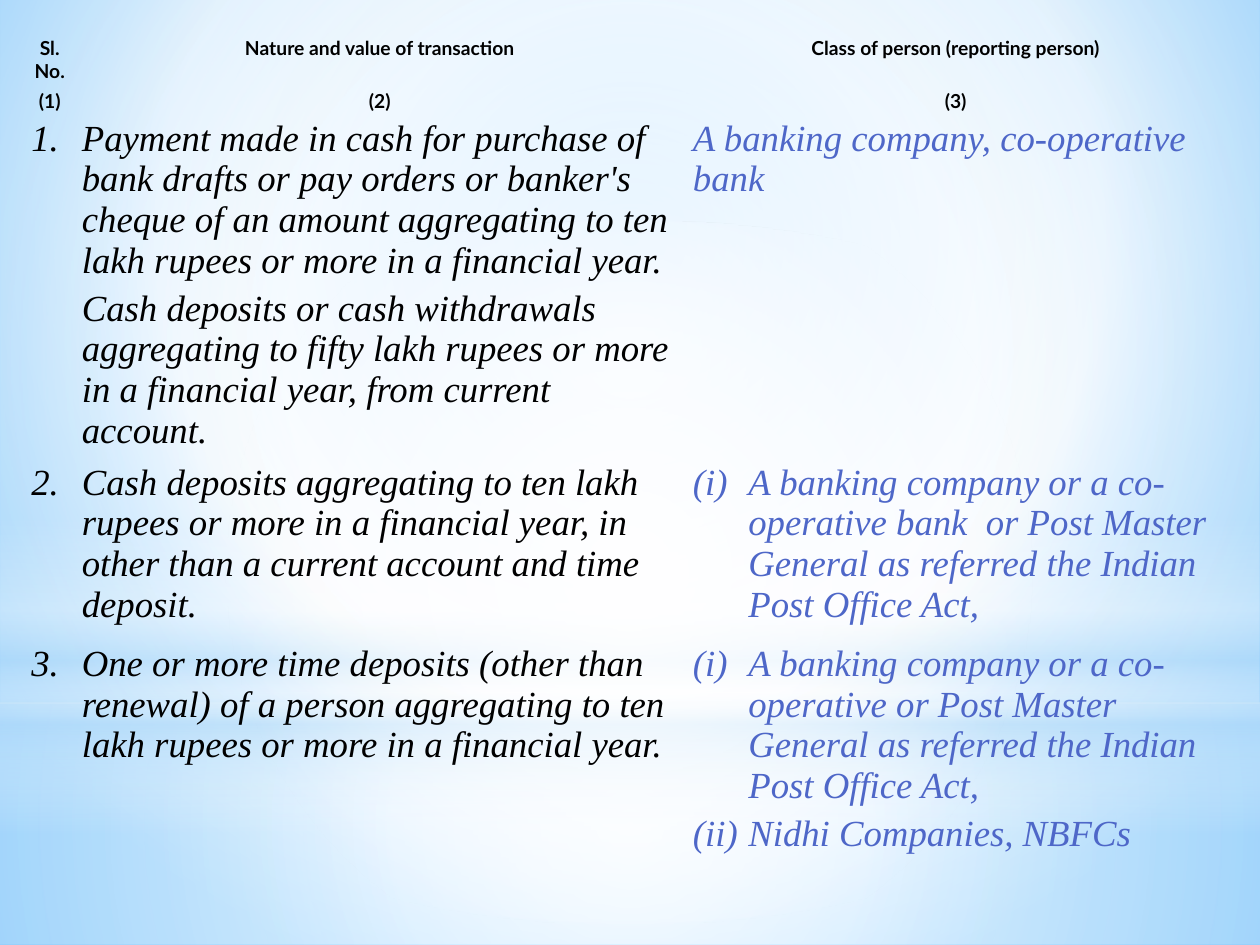
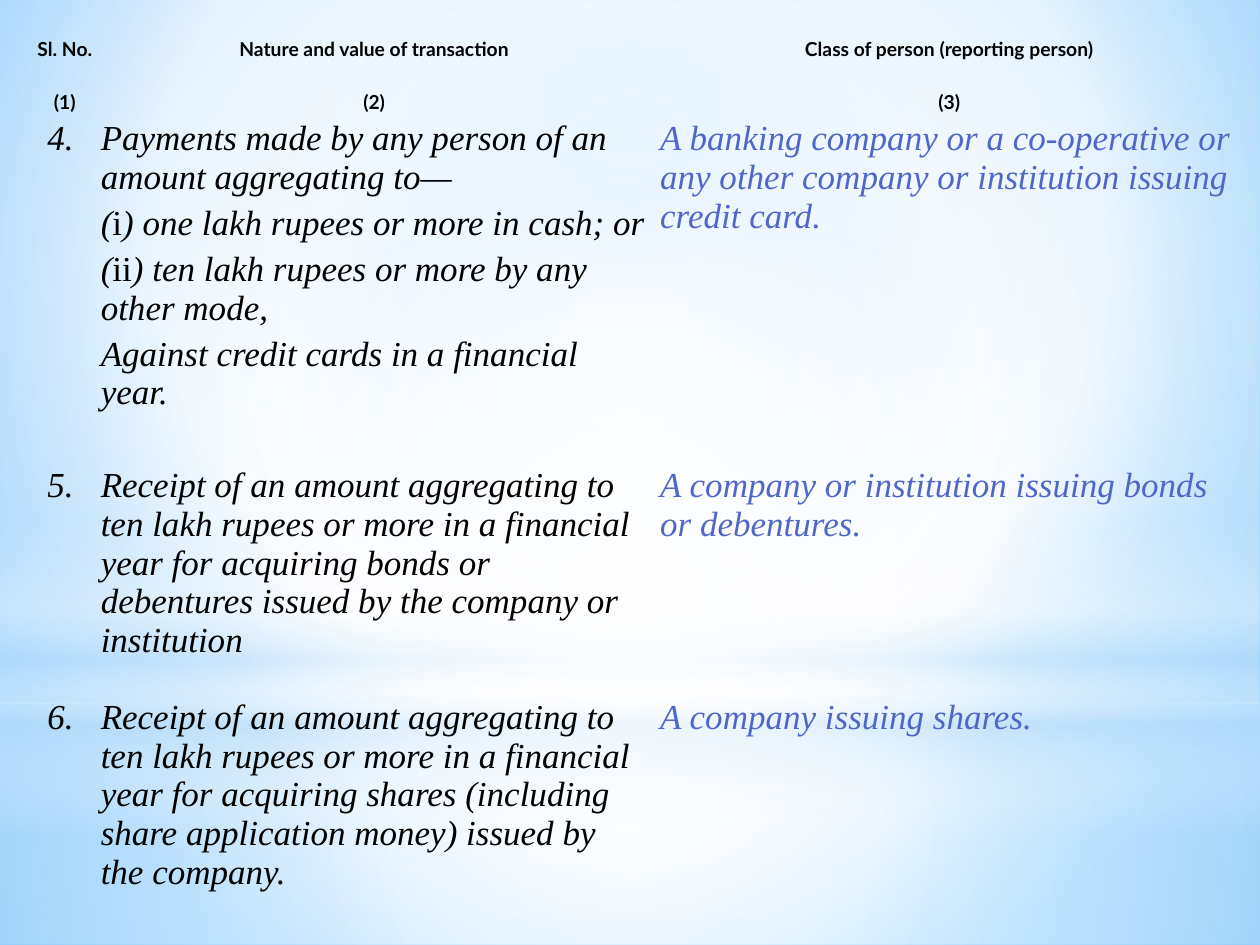
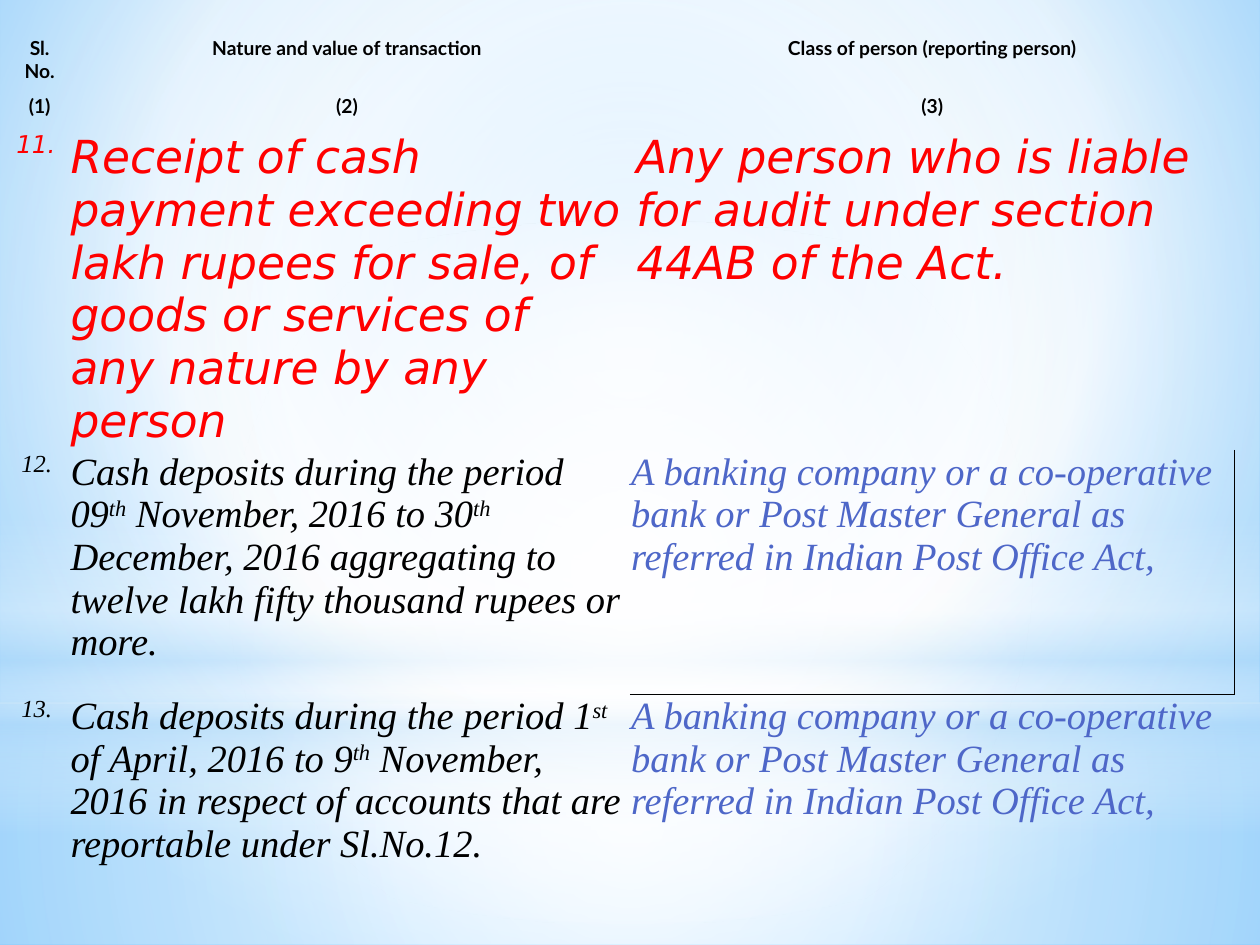
from lxml import etree
from pptx import Presentation
from pptx.dml.color import RGBColor
from pptx.enum.shapes import MSO_SHAPE
from pptx.enum.text import MSO_ANCHOR, PP_ALIGN
from pptx.oxml.ns import qn
from pptx.util import Pt

PX = 9144  # 100 px to the inch
RECTANGLE, ELLIPSE = MSO_SHAPE.RECTANGLE, MSO_SHAPE.OVAL
TOP, LEFT, CENTER = MSO_ANCHOR.TOP, PP_ALIGN.LEFT, PP_ALIGN.CENTER

BLACK = RGBColor(0x00, 0x00, 0x00)
RED = RGBColor(0xFF, 0x00, 0x00)
INDIGO = RGBColor(0x4E, 0x67, 0xC8)
WHITE = RGBColor(0xFF, 0xFF, 0xFF)
PALE_BLUE = RGBColor(0xB4, 0xDC, 0xFA)
SKY_BLUE = RGBColor(0x9E, 0xD5, 0xFF)
BRIGHT_BLUE = RGBColor(0x5B, 0xB9, 0xFF)

HEADING_FONT, SERIF, SANS = "Lato", "Times New Roman", "DejaVu Sans"
PLAIN_TABLE_STYLE = "{2D5ABB26-0587-4C30-8999-92F81FD0307C}"
MIDDLE = (50, 50, 50, 50)
HEADINGS = ["Sl. No.", "Nature and value of transaction", "Class of person (reporting person)"]


def gradient_fill(stops, focus=None):
    """Return a gradFill of (position, colour, opacity) stops: circular around focus, else top to bottom."""
    gradient = etree.Element(qn("a:gradFill"), rotWithShape="1")
    stop_list = etree.SubElement(gradient, qn("a:gsLst"))
    for position, color, opacity in stops:
        stop = etree.SubElement(stop_list, qn("a:gs"), pos=str(position * 1000))
        rgb = etree.SubElement(stop, qn("a:srgbClr"), val=str(color))
        etree.SubElement(rgb, qn("a:alpha"), val=str(opacity * 1000))
    if focus:
        circle = etree.SubElement(gradient, qn("a:path"), path="circle")
        sides = {side: str(percent * 1000) for side, percent in zip("ltrb", focus)}
        etree.SubElement(circle, qn("a:fillToRect"), **sides)
    else:
        etree.SubElement(gradient, qn("a:lin"), ang="5400000", scaled="0")
    return gradient


def write_text(cell, paragraphs, size=11, font=SERIF, color=BLACK, bold=False, italic=True,
               align=LEFT, margin=0, right_margin=0, hanging=0, space_after=4, numbered=False,
               marked="superscript"):
    """Fill a cell; parts between bars are superscript or upright, as marked says."""
    frame = cell.text_frame
    for index, text in enumerate(paragraphs):
        paragraph = frame.add_paragraph() if index else frame.paragraphs[0]
        paragraph.alignment = align
        paragraph.space_after = Pt(space_after)
        properties = paragraph._p.get_or_add_pPr()
        properties.set("marL", str(margin * PX))
        properties.set("marR", str(right_margin * PX))
        properties.set("indent", str(-hanging * PX))
        if numbered:
            etree.SubElement(properties, qn("a:buFont"), typeface="+mj-lt")
            etree.SubElement(properties, qn("a:buAutoNum"), type="romanLcParenBoth")
        for part_index, part in enumerate(text.split("|")):
            is_marked = part_index % 2 == 1
            run = paragraph.add_run()
            run.text = part
            run.font.name, run.font.size, run.font.bold = font, Pt(size), bold
            run.font.italic = italic and not (is_marked and marked == "upright")
            run.font.color.rgb = color
            if is_marked and marked == "superscript":
                run.font._element.set("baseline", "30000")


ROMAN_LIST = {"numbered": True, "margin": 48, "hanging": 44}
RED_SANS = {"font": SANS, "color": RED, "align": LEFT}
UNINDENTED = {"margin": 0, "right_margin": 0, "space_after": 0}
BANKS_AND_POST = "A banking company or a co-operative bank or Post Master General as referred in Indian Post Office Act,"

# Each entry: number, transactions, reporting persons, then formats for all cells, column 2 and column 3
TABLES = [
    {
        "left": 20, "top": 27, "columns": [39, 485, 429], "rows": [42, 23, 273, 144, 214],
        "inset": 2, "size": 21, "number_size": 21,
        "entries": [
            ("1. ",
             ["Payment made in cash for purchase of bank drafts or pay orders or banker's cheque of an "
              "amount aggregating to ten lakh rupees or more in a financial year.",
              "Cash deposits or cash withdrawals aggregating to fifty lakh rupees or more in a financial "
              "year, from current account."],
             ["A banking company, co-operative bank"], {}, {}, {}),
            ("2. ",
             ["Cash deposits aggregating to ten lakh rupees or more in a financial year, in other than a "
              "current account and time deposit."],
             ["A banking company or a co-operative bank  or Post Master General as referred the Indian "
              "Post Office Act,"], {}, {}, ROMAN_LIST),
            ("3. ",
             ["One or more time deposits (other than renewal) of a person aggregating to ten lakh rupees "
              "or more in a financial year."],
             ["A banking company or a co-operative or Post Master General as referred the Indian Post "
              "Office Act,",
              "Nidhi Companies, NBFCs"], {}, {}, ROMAN_LIST),
        ],
    },
    {
        "left": 28, "top": 29, "columns": [47, 444, 469], "rows": [42, 23, 275, 184, 184],
        "inset": 1, "size": 20, "number_size": 20,
        "entries": [
            ("4. ",
             ["Payments made by any person of an amount aggregating to—",
              "(|i|) one lakh rupees or more in cash; or",
              "(|ii|) ten lakh rupees or more by any other mode,",
              "Against credit cards in a financial year."],
             ["A banking company or a co-operative or any other company or institution issuing credit card."],
             {}, {"marked": "upright"}, {}),
            ("5. ",
             ["Receipt of an amount aggregating to ten lakh rupees or more in a financial year for "
              "acquiring bonds or debentures issued by the company or institution"],
             ["A company or institution issuing bonds or debentures."], {}, {}, {}),
            ("6. ",
             ["Receipt of an amount aggregating to ten lakh rupees or more in a financial year for "
              "acquiring shares (including share application money) issued by the company."],
             ["A company issuing shares."], {}, {}, {}),
        ],
    },
    {
        "left": 12, "top": 28, "columns": [39, 449, 480], "rows": [46, 29, 201, 194, 170],
        "inset": 1, "size": 22, "number_size": 14, "boxed_cell": (3, 2),
        "entries": [
            ("11. ",
             ["Receipt of cash payment exceeding two lakh rupees for sale, of goods or services of any "
              "nature by any person"],
             ["Any person who is liable for audit under section 44AB of the Act."],
             RED_SANS, {"size": 26}, {"size": 26}),
            ("12. ",
             ["Cash deposits during the period 09|th| November, 2016 to 30|th| December, 2016 "
              "aggregating to twelve lakh fifty thousand rupees or more."],
             [BANKS_AND_POST], {}, {}, UNINDENTED),
            ("13. ",
             ["Cash deposits during the period 1|st| of April, 2016 to 9|th| November, 2016 in respect "
              "of accounts that are reportable under Sl.No.12."],
             [BANKS_AND_POST], {}, {}, UNINDENTED),
        ],
    },
]

BACKDROP = [
    (RECTANGLE, 558, 192, [(0, WHITE, 91), (37, WHITE, 76), (100, PALE_BLUE, 79)], MIDDLE),
    (RECTANGLE, 0, 558, [(0, WHITE, 89), (48, WHITE, 62), (100, PALE_BLUE, 79)], MIDDLE),
    (RECTANGLE, 412, 250, [(0, WHITE, 0), (29, WHITE, 30), (45, PALE_BLUE, 40), (55, WHITE, 26),
                           (65, PALE_BLUE, 60), (100, WHITE, 0)], None),
    (ELLIPSE, 175, 558, [(0, WHITE, 100), (56, WHITE, 0)], MIDDLE),
]

presentation = Presentation()
presentation.slide_width, presentation.slide_height = 1000 * PX, 750 * PX
blank_layout = presentation.slide_layouts[6]
slides = [presentation.slides.add_slide(blank_layout) for _ in TABLES]

# The backdrop belongs to the master, so every slide shares it
master = presentation.slide_master
master.background.fill.solid()
background = master.element.find(".//" + qn("p:bgPr"))
background.replace(background[0], gradient_fill(
    [(0, SKY_BLUE, 100), (60, WHITE, 100), (100, BRIGHT_BLUE, 100)], (20, 10, 20, 60)))
for index, (kind, top, height, stops, focus) in enumerate(BACKDROP):
    shape = slides[0].shapes.add_shape(kind, 0, top * PX, 1000 * PX, height * PX)
    shape.shadow.inherit = False
    shape.line.fill.background()
    shape.fill.solid()
    solid_fill = shape.element.spPr.find(qn("a:solidFill"))
    shape.element.spPr.replace(solid_fill, gradient_fill(stops, focus))
    shape.element.nvSpPr.cNvPr.set("id", str(100 + index))
    master.shapes.element.insert(2 + index, shape.element)

for slide, layout in zip(slides, TABLES):
    columns, rows = layout["columns"], layout["rows"]
    frame = slide.shapes.add_table(len(rows), len(columns), layout["left"] * PX, layout["top"] * PX,
                                   sum(columns) * PX, sum(rows) * PX)
    table = frame.table
    table.first_row = table.horz_banding = False
    frame.element.find(".//" + qn("a:tableStyleId")).text = PLAIN_TABLE_STYLE
    for column, width in zip(table.columns, columns):
        column.width = width * PX
    for row, height in zip(table.rows, rows):
        row.height = height * PX
    for cell in table.iter_cells():
        cell.margin_left = cell.margin_right = cell.margin_top = cell.margin_bottom = layout["inset"] * PX
        cell.vertical_anchor = TOP
        cell.fill.background()

    for column_index, heading in enumerate(HEADINGS):
        for row_index, text in enumerate([heading, f"({column_index + 1})"]):
            write_text(table.cell(row_index, column_index), [text], font=HEADING_FONT, bold=True,
                       italic=False, align=CENTER, space_after=0)

    body = {"size": layout["size"], "margin": 4, "right_margin": 5}
    for row_index, entry in enumerate(layout["entries"], start=2):
        number, transactions, persons, row_format, transaction_format, person_format = entry
        write_text(table.cell(row_index, 0), [number],
                   **{"size": layout["number_size"], "align": CENTER, **row_format})
        write_text(table.cell(row_index, 1), transactions, **{**body, **row_format, **transaction_format})
        write_text(table.cell(row_index, 2), persons,
                   **{**body, "color": INDIGO, **row_format, **person_format})

    if "boxed_cell" in layout:
        cell_properties = table.cell(*layout["boxed_cell"])._tc.get_or_add_tcPr()
        for index, side in enumerate(["a:lnR", "a:lnB"]):
            border = etree.Element(qn(side), w=str(Pt(0.75)))
            border_fill = etree.SubElement(border, qn("a:solidFill"))
            etree.SubElement(border_fill, qn("a:srgbClr"), val=str(BLACK))
            cell_properties.insert(index, border)

presentation.save("out.pptx")
